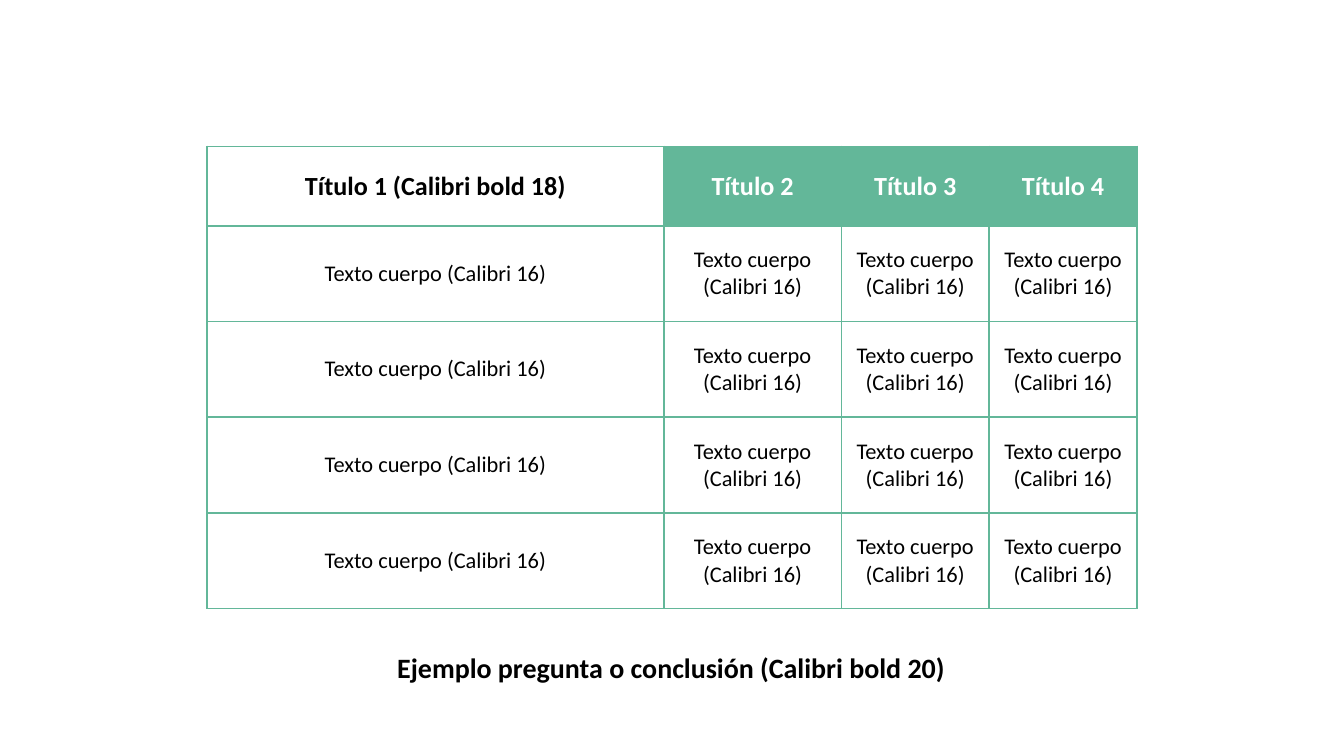
import pptx
import pptx.util
import pptx.enum.text
import pptx.dml.color
import pptx.oxml
import pptx.oxml.ns

INK = {"green": "63B799", "black": "000000", "white": "FFFFFF"}
Inches = pptx.util.Inches
Pt = pptx.util.Pt
RGB = pptx.dml.color.RGBColor.from_string


def write(par, text, size, bold, color):
    par.text = text
    par.alignment = pptx.enum.text.PP_ALIGN.CENTER
    font = par.font
    font.name, font.size, font.bold = "Calibri", Pt(size), bold
    font.color.rgb = RGB(INK[color])


def outline(cell, color):
    for side in "LRTB":
        cell._tc.get_or_add_tcPr().append(pptx.oxml.parse_xml(
            f'<a:ln{side} {pptx.oxml.ns.nsdecls("a")} w="{Pt(1)}">'
            f'<a:solidFill><a:srgbClr val="{INK[color]}"/></a:solidFill>'
            f'</a:ln{side}>'))


# Widescreen slide, 16 to 9
deck = pptx.Presentation()
deck.slide_width, deck.slide_height = Inches(10), Inches(10 * 9 / 16)
slide = deck.slides.add_slide(deck.slide_layouts[6])

# Closing question
box = slide.shapes.add_textbox(Inches(0.26), Inches(4.8), Inches(9.47), Inches(0.33))
frame = box.text_frame
frame.word_wrap = True
frame.auto_size = pptx.enum.text.MSO_AUTO_SIZE.SHAPE_TO_FIT_TEXT
frame.margin_left = frame.margin_right = Inches(0.07)
frame.margin_top = frame.margin_bottom = Inches(0.04)
write(frame.paragraphs[0], "Ejemplo pregunta o conclusión (Calibri bold 20)", 15, True, "black")

# Table grid
cols = [3.4, 1.32, 1.1, 1.1]
rows = [0.59] + [2.85 / 4] * 4
heads = ["Título 1 (Calibri bold 18)", "Título 2", "Título 3", "Título 4"]
body = "Texto cuerpo (Calibri 16)"
table = slide.shapes.add_table(
    len(rows), len(cols), Inches(1.54), Inches(1.09),
    Inches(sum(cols)), Inches(sum(rows))).table
table.first_row = table.horz_banding = False
for col, width in zip(table.columns, cols):
    col.width = Inches(width)

# Cells: titles on top, body text below
for r, height in enumerate(rows):
    table.rows[r].height = Inches(height)
    for c, head in enumerate(heads):
        cell = table.cell(r, c)
        cell.vertical_anchor = pptx.enum.text.MSO_ANCHOR.MIDDLE
        cell.margin_left = cell.margin_right = Inches(0.08)
        cell.margin_top = cell.margin_bottom = Inches(0.04)
        outline(cell, "green")
        par = cell.text_frame.paragraphs[0]
        if r == 0:
            write(par, head, 14, True, "white" if c else "black")
        else:
            write(par, body, 12, False, "black")
        if r == 0 and c > 0:
            cell.fill.solid()
            cell.fill.fore_color.rgb = RGB(INK["green"])
        else:
            cell.fill.background()

deck.save("out.pptx")
